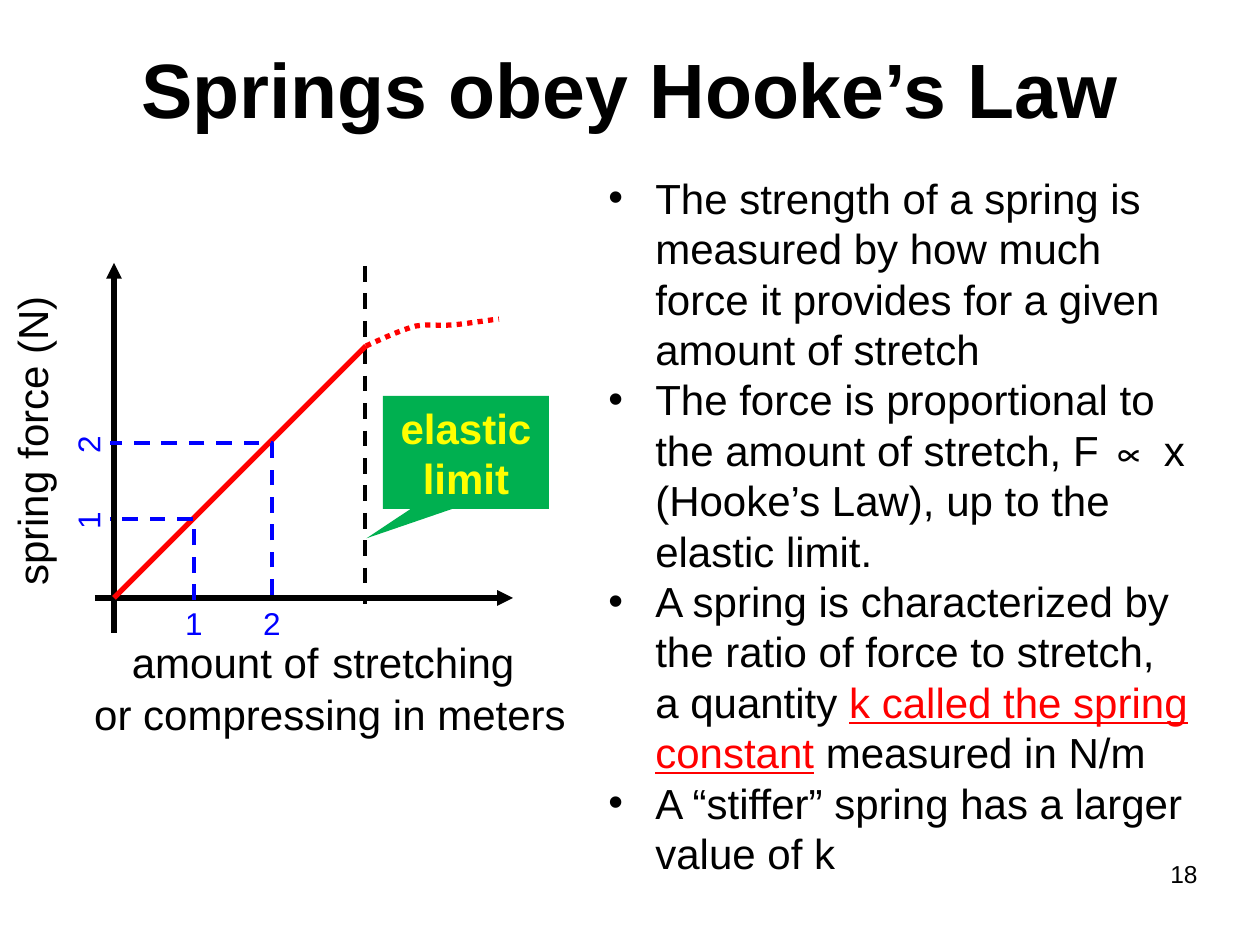
from pptx import Presentation
from pptx.dml.color import RGBColor
from pptx.enum.dml import MSO_LINE_DASH_STYLE as Dash
from pptx.enum.shapes import MSO_CONNECTOR_TYPE as Connector, MSO_SHAPE as Shape
from pptx.enum.text import MSO_ANCHOR as Anchor, PP_ALIGN as Align
from pptx.oxml.ns import qn
from pptx.util import Pt
from lxml.etree import SubElement

PX = 914400 / 126
COLORS = {"ink": "000000", "paper": "FFFFFF", "red": "FF0000",
          "blue": "0000FF", "green": "00B050", "yellow": "FFFF00"}

BULLETS = [
    [("The strength of a spring is measured by how much force it provides "
      "for a given amount of stretch", False)],
    [("The force is proportional to the amount of stretch, F ∝ x "
      "(Hooke’s Law), up to the elastic limit.", False)],
    [("A spring is characterized by the ratio of force to stretch, a quantity ", False),
     ("k called the spring constant", True), (" measured in N/m", False)],
    [("A “stiffer” spring has a larger value of k", False)],
]


def emu(length):
    return round(length * PX)


def color(name):
    return RGBColor.from_string(COLORS[name])


def style_font(font, size, name="ink", bold=False):
    font.name, font.size, font.bold = "Arial", Pt(size), bold
    font.color.rgb = color(name)


def style_line(line, name, width, dash=None):
    line.color.rgb = color(name)
    line.width = Pt(width)
    if dash:
        line.dash_style = dash


def add_text(page, box, text, size, name="ink", align=Align.LEFT, bold=False,
             inset=True, vertical=False):
    shape = page.shapes.add_textbox(*map(emu, box))
    frame = shape.text_frame
    frame.word_wrap = True
    if not inset:
        frame.margin_left = frame.margin_right = 0
        frame.margin_top = frame.margin_bottom = 0
    if vertical:
        frame._txBody.bodyPr.set("vert", "vert270")
    para = frame.paragraphs[0]
    para.text, para.alignment = text, align
    style_font(para.font, size, name, bold)
    return shape


def add_line(page, start, end, name, width, dash=None, arrow=False):
    line = page.shapes.add_connector(Connector.STRAIGHT, *map(emu, start + end))
    style_line(line.line, name, width, dash)
    properties = line._element.spPr
    if arrow:
        SubElement(properties.find(qn("a:ln")), qn("a:tailEnd"), type="triangle")
    SubElement(properties, qn("a:effectLst"))


def add_path(page, points, name, width, dash):
    start, *rest = [(emu(x), emu(y)) for x, y in points]
    builder = page.shapes.build_freeform(*start)
    builder.add_line_segments(rest, close=False)
    outline = builder.convert_to_shape()
    outline.shadow.inherit = False
    outline.fill.background()
    style_line(outline.line, name, width, dash)


def curve_points(start, segments, steps=8):
    points = [start]
    for first, second, end in segments:
        for step in range(1, steps + 1):
            t = step / steps
            weights = ((1 - t) ** 3, 3 * t * (1 - t) ** 2, 3 * t * t * (1 - t), t ** 3)
            controls = (start, first, second, end)
            points.append(tuple(sum(w * c[axis] for w, c in zip(weights, controls))
                                for axis in (0, 1)))
        start = end
    return points


def add_title(page, box):
    title = add_text(page, box, "Springs obey Hooke’s Law", 44,
                     align=Align.CENTER, bold=True)
    title.fill.solid()
    title.fill.fore_color.rgb = color("paper")
    title.text_frame.vertical_anchor = Anchor.MIDDLE


def add_bullets(page, box):
    frame = page.shapes.add_textbox(*map(emu, box)).text_frame
    frame.word_wrap = True
    for index, spans in enumerate(BULLETS):
        para = frame.add_paragraph() if index else frame.paragraphs[0]
        properties = para._p.get_or_add_pPr()
        properties.set("marL", str(emu(47)))
        properties.set("indent", str(emu(-47)))
        SubElement(properties, qn("a:buFont"), typeface="Arial")
        SubElement(properties, qn("a:buChar"), char="•")
        style_font(para.font, 24)
        for text, key_term in spans:
            span = para.add_run()
            span.text = text
            if key_term:
                span.font.underline = True
                span.font.color.rgb = color("red")


def add_callout(page, box):
    callout = page.shapes.add_shape(Shape.RECTANGULAR_CALLOUT, *map(emu, box))
    callout.shadow.inherit = False
    callout.fill.solid()
    callout.fill.fore_color.rgb = color("green")
    callout.line.fill.background()
    callout.adjustments[0], callout.adjustments[1] = -0.6, 0.76
    frame = callout.text_frame
    frame.word_wrap, frame.vertical_anchor = True, Anchor.TOP
    para = frame.paragraphs[0]
    para.text, para.alignment = "elastic limit", Align.CENTER
    style_font(para.font, 24, "yellow", True)


def add_caption(page, box):
    frame = add_text(page, box, "", 24, align=Align.CENTER).text_frame
    first, second = frame.paragraphs[0], frame.add_paragraph()
    for text, size in (("amount of", 24), (" ", 28), ("stretching", 24), (" ", 28)):
        span = first.add_run()
        span.text, span.font.size = text, Pt(size)
    second.text, second.alignment = "or compressing in meters", Align.CENTER
    style_font(second.font, 24)


def add_graph(page, box):
    left, top, width, height = box

    def at(x, y):
        return left + x, top + y

    origin, limit = at(114, 335), at(366, 83)
    bend = [(at(384, 75), at(401, 67), at(416, 63)),
            (at(430, 61), at(438, 63), at(452, 62)),
            (at(465, 61), at(483, 58), at(499, 56))]
    add_path(page, curve_points(limit, bend), "red", 3, Dash.ROUND_DOT)
    add_line(page, at(365, 3), at(365, 341), "ink", 2.25, Dash.DASH)
    add_callout(page, (*at(383, 133), 166, 113))
    add_text(page, (*at(0, 8), 76, 340), "spring force (N)", 24,
             align=Align.CENTER, vertical=True)
    add_line(page, at(114, 370), at(114, 0), "ink", 3, arrow=True)
    add_line(page, at(95, 335), at(513, 335), "ink", 3, arrow=True)
    add_caption(page, (*at(72, 360), width - 50, height - 361))
    add_line(page, origin, limit, "red", 3)
    for label, x, y, foot in (("1", 194, 256, 337), ("2", 272, 180, 332)):
        add_path(page, [at(x, foot), at(x, y), at(110, y)], "blue", 2.25, Dash.DASH)
        add_text(page, (*at(x - 20, 341), 40, 38), label, 18, "blue",
                 Align.CENTER, inset=False)
        add_text(page, (*at(69, y - 18), 38, 40), label, 18, "blue",
                 Align.CENTER, inset=False, vertical=True)


def add_page_number(page, box):
    add_text(page, box, "18", 14, align=Align.RIGHT)


def main():
    deck = Presentation()
    deck.slide_width, deck.slide_height = emu(1260), emu(945)
    page = deck.slides.add_slide(deck.slide_layouts[6])
    add_title(page, (63, 20, 1134, 135))
    add_bullets(page, (596, 166, 606, 677))
    add_page_number(page, (916, 853, 294, 66))
    add_graph(page, (0, 263, 566, 483))
    deck.save("out.pptx")


if __name__ == "__main__":
    main()
